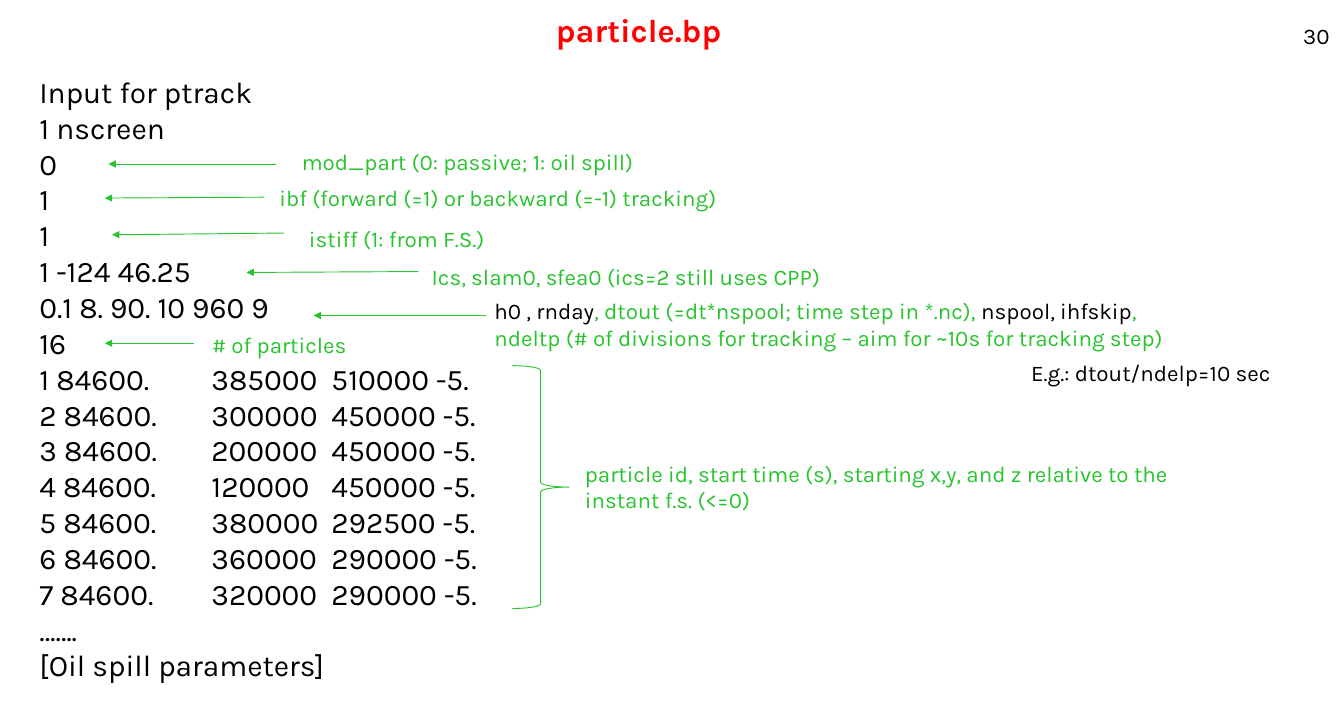
from dataclasses import dataclass

from lxml import etree
from pptx import Presentation
from pptx.dml.color import RGBColor
from pptx.enum.shapes import MSO_CONNECTOR, MSO_SHAPE
from pptx.enum.text import MSO_ANCHOR, PP_ALIGN
from pptx.oxml.ns import qn
from pptx.util import Inches, Pt

STRAIGHT = MSO_CONNECTOR.STRAIGHT
RIGHT_BRACE = MSO_SHAPE.RIGHT_BRACE
TOP, BOTTOM = MSO_ANCHOR.TOP, MSO_ANCHOR.BOTTOM
LEFT, CENTER, RIGHT = PP_ALIGN.LEFT, PP_ALIGN.CENTER, PP_ALIGN.RIGHT


@dataclass(frozen=True)
class Theme:
    font: str = "Karla"
    ink: RGBColor = RGBColor(0, 0, 0)
    note: RGBColor = RGBColor(0x29, 0xC3, 0x30)
    title: RGBColor = RGBColor(0xFF, 0, 0)
    title_size: int = 26
    listing_size: int = 24
    note_size: int = 18
    line_width: float = 0.75


THEME = Theme()
SLIDE_SIZE = (15, 8)
WIDE_INSETS = (0.13, 0.07)
NOTE_INSETS = (0.1, 0.05)

TITLE = "particle.bp"
PAGE_NUMBER = "30"
HEADER_LINES = [
    "Input for ptrack", "1 nscreen", "0", "1", "1",
    "1 -124 46.25", "0.1 8. 90. 10 960 9", "16",
]
START_TIME, DEPTH = "84600.", "-5."
PARTICLES = [
    (385000, 510000), (300000, 450000), (200000, 450000), (120000, 450000),
    (380000, 292500), (360000, 290000), (320000, 290000),
]
FOOTER_LINES = ["…….", "[Oil spill parameters]"]
COLUMN_STOPS = (1.92, 3.26)

# Each note: text or coloured spans, then left, top, width, height
NOTES = [
    ("mod_part (0: passive; 1: oil spill)", (3.27, 1.6, 4.06, 0.4)),
    ("ibf (forward (=1) or backward (=-1) tracking)", (3.02, 2.01, 5.33, 0.4)),
    ("istiff (1: from F.S.)", (3.35, 2.46, 2.61, 0.4)),
    ("Ics, slam0, sfea0 (ics=2 still uses CPP)", (4.72, 2.89, 4.7, 0.4)),
    ([("h0 , rnday", THEME.ink),
      (", dtout (=dt*nspool; time step in *.nc), ", THEME.note),
      ("nspool, ihfskip", THEME.ink),
      (", ndeltp (# of divisions for tracking – aim for ~10s for tracking step)",
       THEME.note)], (5.42, 3.27, 7.9, 0.71)),
    ("# of particles", (2.27, 3.64, 2.06, 0.4)),
    ("particle id, start time (s), starting x,y, and z relative to the "
     "instant f.s. (<=0)", (6.43, 5.08, 7, 0.71)),
    ([("E.g.: dtout/ndelp=10 sec", THEME.ink)], (11.41, 3.96, 3.46, 0.4)),
]
# Each arrow: start x, start y, end x, end y
ARROWS = [
    (3.08, 1.83, 1.21, 1.83), (2.95, 2.2, 1.17, 2.21),
    (3.17, 2.6, 1.25, 2.62), (4.67, 3.03, 2.75, 3.04),
    (5.42, 3.52, 3.5, 3.52), (2.17, 3.83, 1.17, 3.83),
]
BRACE = (5.72, 4.08, 0.63, 2.71)


def inches(values):
    return [Inches(value) for value in values]


def add_text(page, lines, place, *, size, color, bold=False, align=LEFT,
             anchor=TOP, insets=WIDE_INSETS):
    """Add one paragraph per line; a line is a string or (text, color) spans."""
    box = page.shapes.add_textbox(*inches(place))
    frame = box.text_frame
    frame.word_wrap = True
    frame.vertical_anchor = anchor
    frame.margin_left = frame.margin_right = Inches(insets[0])
    frame.margin_top = frame.margin_bottom = Inches(insets[1])
    for index, line in enumerate(lines):
        para = frame.add_paragraph() if index else frame.paragraphs[0]
        para.alignment = align
        spans = [(line, color)] if isinstance(line, str) else line
        for text, span_color in spans:
            span = para.add_run()
            span.text = text
            span.font.name = THEME.font
            span.font.size = Pt(size)
            span.font.bold = bold
            span.font.color.rgb = span_color
    return box


def add_tab_stops(para, stops):
    tabs = etree.SubElement(para._p.get_or_add_pPr(), qn("a:tabLst"))
    for stop in stops:
        etree.SubElement(tabs, qn("a:tab"), pos=str(Inches(stop)), algn="l")


def style_line(line):
    line.color.rgb = THEME.note
    line.width = Pt(THEME.line_width)


def add_arrow(page, ends):
    arrow = page.shapes.add_connector(STRAIGHT, *inches(ends))
    style_line(arrow.line)
    etree.SubElement(arrow.line._get_or_add_ln(), qn("a:tailEnd"), type="triangle")
    etree.SubElement(arrow._element.spPr, qn("a:effectLst"))


def add_listing(page):
    rows = [f"{number} {START_TIME}\t{x}\t{y} {DEPTH}"
            for number, (x, y) in enumerate(PARTICLES, 1)]
    box = add_text(page, HEADER_LINES + rows + FOOTER_LINES, (0.31, 0.75, 11.04, 7),
                   size=THEME.listing_size, color=THEME.ink)
    first = len(HEADER_LINES)
    for para in box.text_frame.paragraphs[first:first + len(rows)]:
        add_tab_stops(para, COLUMN_STOPS)


def add_brace(page):
    brace = page.shapes.add_shape(RIGHT_BRACE, *inches(BRACE))
    brace.shadow.inherit = False
    brace.fill.background()
    style_line(brace.line)


def main():
    deck = Presentation()
    deck.slide_width, deck.slide_height = inches(SLIDE_SIZE)
    page = deck.slides.add_slide(deck.slide_layouts[6])
    add_text(page, [PAGE_NUMBER], (13.97, 0.09, 1, 0.53), size=THEME.note_size,
             color=THEME.ink, align=RIGHT, anchor=BOTTOM)
    add_text(page, [TITLE], (0.63, 0.18, 13, 0.44), size=THEME.title_size,
             color=THEME.title, bold=True, align=CENTER, anchor=BOTTOM)
    add_listing(page)
    for text, place in NOTES:
        add_text(page, [text], place, size=THEME.note_size, color=THEME.note,
                 insets=NOTE_INSETS)
    for ends in ARROWS:
        add_arrow(page, ends)
    add_brace(page)
    deck.save("out.pptx")


if __name__ == "__main__":
    main()
